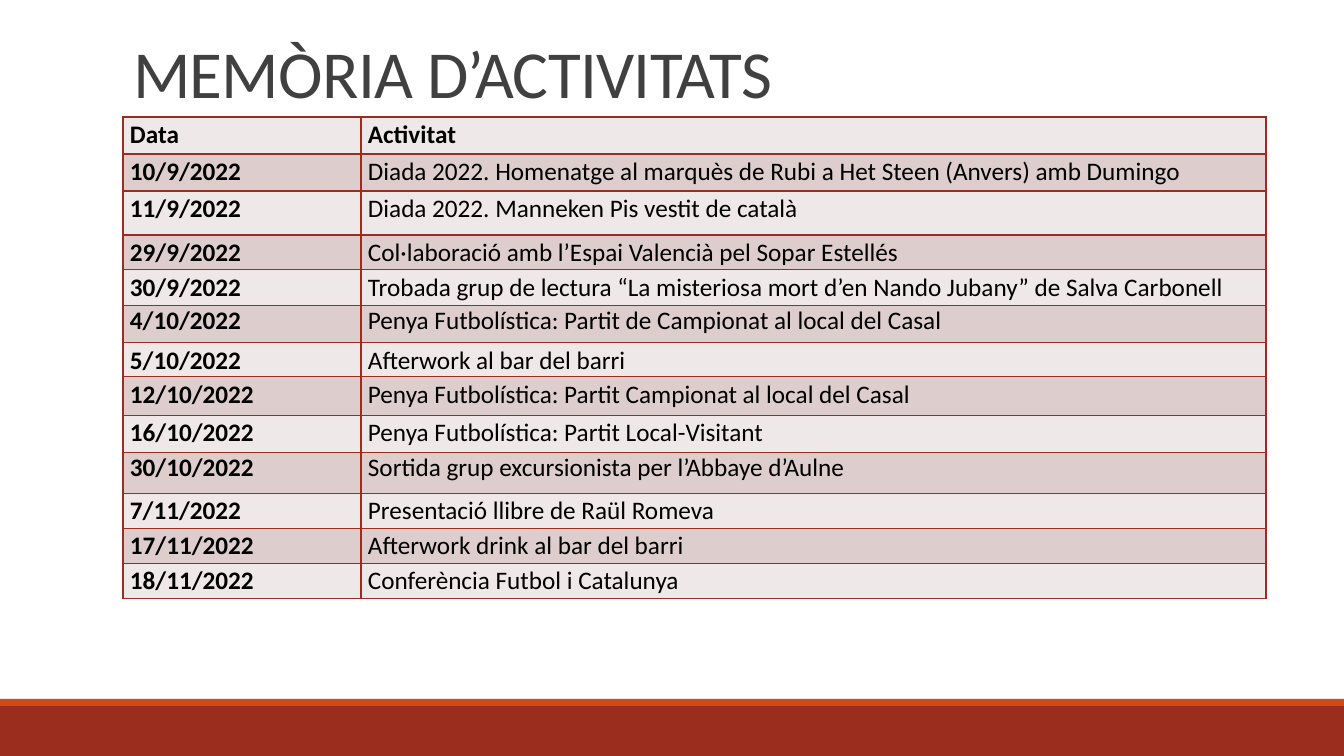
from lxml import etree
from pptx import Presentation
from pptx import util as u
from pptx.dml.color import RGBColor
from pptx.enum import shapes, text
from pptx.oxml import ns

PX = 9144000 / 1008
COLORS = {
    "title": "404040",
    "ink": "000000",
    "border": "9B2D1F",
    "footer": "9B2D1F",
    "stripe": "D34817",
    "light": "EFE8E8",
    "dark": "DECDCD",
}
FONT = "Calibri"
COLUMN_WIDTHS = [238, 905]
ACTIVITIES = [
    ("Data", "Activitat", 37),
    ("10/9/2022", "Diada 2022. Homenatge al marquès de Rubi a Het Steen (Anvers) amb Dumingo", 37),
    ("11/9/2022", "Diada 2022. Manneken Pis vestit de català", 44),
    ("29/9/2022", "Col·laboració amb l’Espai Valencià pel Sopar Estellés", 35),
    ("30/9/2022", "Trobada grup de lectura “La misteriosa mort d’en Nando Jubany” de Salva Carbonell", 36),
    ("4/10/2022", "Penya Futbolística: Partit de Campionat al local del Casal", 37),
    ("5/10/2022", "Afterwork al bar del barri", 34),
    ("12/10/2022", "Penya Futbolística: Partit Campionat al local del Casal", 39),
    ("16/10/2022", "Penya Futbolística: Partit Local-Visitant", 37),
    ("30/10/2022", "Sortida grup excursionista per l’Abbaye d’Aulne", 41),
    ("7/11/2022", "Presentació llibre de Raül Romeva", 35),
    ("17/11/2022", "Afterwork drink al bar del barri", 35),
    ("18/11/2022", "Conferència Futbol i Catalunya", 35),
]
SINGLE_SPACED = {"4/10/2022", "30/10/2022"}


def px(length):
    return u.Emu(round(length * PX))


def color(name):
    return RGBColor.from_string(COLORS[name])


def style_font(font, size, name, bold=False):
    font.name = FONT
    font.size = u.Pt(size)
    font.bold = bold
    font.color.rgb = color(name)


def add_bar(page, left, top, width, height, name):
    bar = page.shapes.add_shape(
        shapes.MSO_SHAPE.RECTANGLE, px(left), px(top), px(width), px(height))
    bar.shadow.inherit = False
    bar.fill.solid()
    bar.fill.fore_color.rgb = color(name)
    bar.line.fill.background()


def add_footer(page, left, top, width, height):
    stripe = 7
    add_bar(page, left, top + stripe, width, height - stripe, "footer")
    add_bar(page, left, top, width, stripe, "stripe")


def add_title(page, left, top, width, height):
    title = page.shapes.title
    title.left, title.top, title.width, title.height = map(px, (left, top, width, height))
    frame = title.text_frame
    frame.word_wrap = True
    frame.auto_size = text.MSO_AUTO_SIZE.NONE
    frame.vertical_anchor = text.MSO_ANCHOR.BOTTOM
    para = frame.paragraphs[0]
    para.alignment = text.PP_ALIGN.LEFT
    para.line_spacing = 0.85
    style_font(para.font, 48, "title")
    span = para.add_run()
    span.text = "MEMÒRIA D’ACTIVITATS"
    span.font._element.set("spc", "-50")


def add_borders(cell):
    properties = cell._tc.get_or_add_tcPr()
    for side in ("a:lnL", "a:lnR", "a:lnT", "a:lnB"):
        line = etree.SubElement(properties, ns.qn(side), w=str(u.Pt(1)))
        fill = etree.SubElement(line, ns.qn("a:solidFill"))
        etree.SubElement(fill, ns.qn("a:srgbClr"), val=COLORS["border"])


def fill_cell(cell, words, bold, spacing, shade):
    add_borders(cell)
    cell.fill.solid()
    cell.fill.fore_color.rgb = color(shade)
    cell.margin_left = cell.margin_right = px(7)
    cell.margin_top = cell.margin_bottom = 0
    para = cell.text_frame.paragraphs[0]
    para.text = words
    para.line_spacing = spacing
    style_font(para.font, 18, "ink", bold)


def add_activities(page, left, top):
    width = sum(COLUMN_WIDTHS)
    height = sum(activity[2] for activity in ACTIVITIES)
    table = page.shapes.add_table(
        len(ACTIVITIES), len(COLUMN_WIDTHS), px(left), px(top), px(width), px(height)).table
    for column, column_width in zip(table.columns, COLUMN_WIDTHS):
        column.width = px(column_width)
    for index, (date, activity, row_height) in enumerate(ACTIVITIES):
        table.rows[index].height = px(row_height)
        shade = "dark" if index % 2 else "light"
        spacing = 1.0 if date in SINGLE_SPACED else 1.07
        fill_cell(table.cell(index, 0), date, True, spacing, shade)
        fill_cell(table.cell(index, 1), activity, index == 0, spacing, shade)


def main():
    deck = Presentation()
    deck.slide_width, deck.slide_height = px(1344), px(756)
    page = deck.slides.add_slide(deck.slide_layouts[5])
    add_footer(page, 0, 699, 1344, 57)
    add_title(page, 123, 23, 1109, 94)
    add_activities(page, 123, 117)
    deck.save("out.pptx")


if __name__ == "__main__":
    main()
